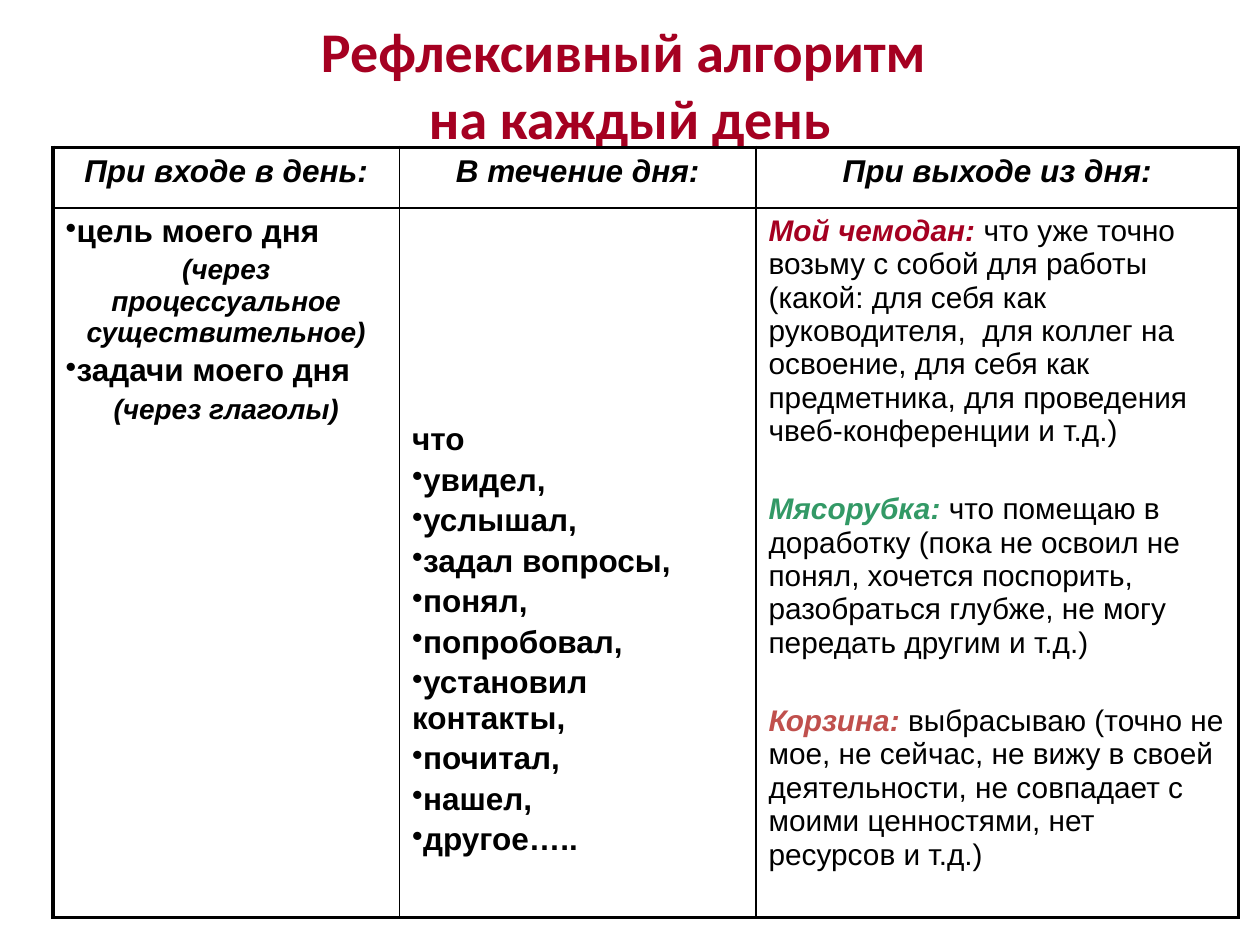
from lxml import etree
from pptx import Presentation
from pptx import util as u
from pptx.dml.color import RGBColor
from pptx.enum import text
from pptx.oxml.ns import qn

BLACK = RGBColor(0, 0, 0)
CRIMSON = RGBColor(0xA5, 0x00, 0x21)
GREEN = RGBColor(0x33, 0x99, 0x66)
RED = RGBColor(0xC0, 0x50, 0x4D)
THICK, THIN = 2.25, 1
COL_WIDTHS = (2.75, 2.83, 3.83)
ROW_HEIGHTS = (0.48, 5.6)

HEADERS = ("При входе в день:", "В течение дня:", "При выходе из дня:")
MORNING = (
    ("цель моего дня", "(через процессуальное существительное)"),
    ("задачи моего дня", "(через глаголы)"),
)
DAYTIME = ("увидел,", "услышал,", "задал вопросы,", "понял,", "попробовал,",
           "установил контакты,", "почитал,", "нашел,", "другое…..")
EVENING = (
    ("Мой чемодан: ", CRIMSON,
     "что уже точно возьму с собой для работы (какой: для себя как "
     "руководителя,  для коллег на освоение, для себя как предметника, "
     "для проведения чвеб-конференции и т.д.)"),
    ("Мясорубка: ", GREEN,
     "что помещаю в доработку (пока не освоил не понял, хочется поспорить, "
     "разобраться глубже, не могу передать другим и т.д.)"),
    ("Корзина: ", RED,
     "выбрасываю (точно не мое, не сейчас, не вижу в своей деятельности, "
     "не совпадает с моими ценностями, нет ресурсов и т.д.)"),
)


def style_run(r, size, color=BLACK, bold=True, italic=False, font="Arial"):
    f = r.font
    f.name, f.size, f.bold, f.italic = font, u.Pt(size), bold, italic
    f.color.rgb = color


def add_run(p, words, size, **style):
    r = p.add_run()
    r.text = words
    style_run(r, size, **style)


def next_paragraph(tf, gap=3, center=False):
    """Return the still empty first paragraph, or a new one set off by gap points."""
    p = tf.paragraphs[0]
    if p.runs:
        p = tf.add_paragraph()
        p.space_before = u.Pt(gap)
    p.alignment = text.PP_ALIGN.CENTER if center else text.PP_ALIGN.LEFT
    return p


def add_bullet(tf, words):
    p = next_paragraph(tf)
    pPr = p._p.get_or_add_pPr()
    pPr.set("marL", "0")
    pPr.set("indent", "0")
    etree.SubElement(pPr, qn("a:buChar")).set("char", "•")
    add_run(p, words, 18)


def set_borders(cell, widths):
    """Draw black borders; widths are points for left, right, top, bottom."""
    tcPr = cell._tc.get_or_add_tcPr()
    for i, (side, width) in enumerate(zip("LRTB", widths)):
        ln = etree.Element(qn(f"a:ln{side}"), w=str(u.Pt(width)))
        fill = etree.SubElement(ln, qn("a:solidFill"))
        etree.SubElement(fill, qn("a:srgbClr"), val=str(BLACK))
        tcPr.insert(i, ln)


def add_title(s, left, top, width, height):
    tf = s.shapes.add_textbox(left, top, width, height).text_frame
    tf.word_wrap = True
    tf.vertical_anchor = text.MSO_ANCHOR.MIDDLE
    p = tf.paragraphs[0]
    p.text = "Рефлексивный алгоритм \vна каждый день"
    p.alignment = text.PP_ALIGN.CENTER
    for r in p.runs:
        style_run(r, 32, CRIMSON, font="Calibri")


def fill_morning(tf):
    for task, hint in MORNING:
        add_bullet(tf, task)
        add_run(next_paragraph(tf, center=True), hint, 16, italic=True)


def fill_daytime(tf):
    add_run(next_paragraph(tf), "что", 18)
    for action in DAYTIME:
        add_bullet(tf, action)


def fill_evening(tf):
    for name, color, meaning in EVENING:
        p = next_paragraph(tf, gap=25.6)
        add_run(p, name, 17, color=color, italic=True)
        add_run(p, meaning, 17, bold=False)


def add_day_table(s, left, top):
    rows, cols = len(ROW_HEIGHTS), len(COL_WIDTHS)
    table = s.shapes.add_table(rows, cols, left, top, u.Inches(sum(COL_WIDTHS)),
                               u.Inches(sum(ROW_HEIGHTS))).table
    table.first_row = table.horz_banding = False
    for column, width in zip(table.columns, COL_WIDTHS):
        column.width = u.Inches(width)
    for row, height in zip(table.rows, ROW_HEIGHTS):
        row.height = u.Inches(height)
    for i in range(rows):
        for j in range(cols):
            cell = table.cell(i, j)
            cell.fill.background()
            outer = (j == 0, j == cols - 1, i == 0, i == rows - 1)
            set_borders(cell, [THICK if edge else THIN for edge in outer])
    for j, header in enumerate(HEADERS):
        p = next_paragraph(table.cell(0, j).text_frame, center=True)
        add_run(p, header, 18, italic=True)
    for j, fill_cell in enumerate((fill_morning, fill_daytime, fill_evening)):
        fill_cell(table.cell(1, j).text_frame)
    table.cell(1, 1).margin_top = u.Inches(1.7)


def main():
    prs = Presentation()
    prs.slide_width, prs.slide_height = u.Inches(10), u.Inches(7.5)
    s = prs.slides.add_slide(prs.slide_layouts[6])
    add_title(s, 0, 0, prs.slide_width, u.Inches(1.33))
    add_day_table(s, u.Inches(0.42), u.Inches(1.17))
    prs.save("out.pptx")


if __name__ == "__main__":
    main()
